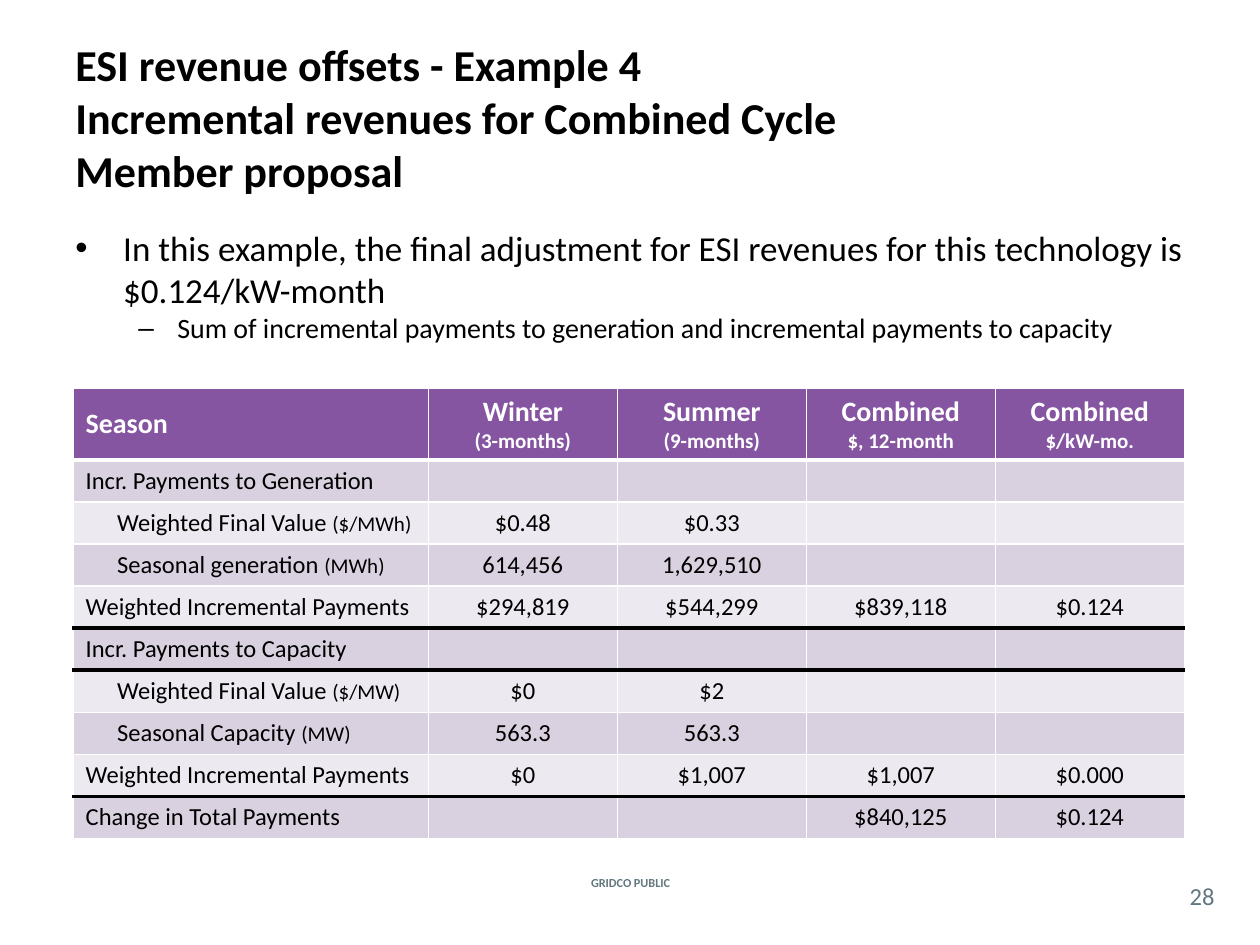
import pptx
import pptx.dml.color
import pptx.enum.text
import pptx.oxml.ns
import pptx.util
from lxml import etree
from pptx.util import Inches

ALIGN = pptx.enum.text.PP_ALIGN
ANCHOR = pptx.enum.text.MSO_ANCHOR
qn = pptx.oxml.ns.qn


def style(font, size, color, bold=False):
    font.name = "Calibri"
    font.size = pptx.util.Pt(size)
    font.bold = bold
    font.color.rgb = pptx.dml.color.RGBColor.from_string(color)


def add_text_frame(left, top, width, height, anchor=ANCHOR.MIDDLE):
    box = slide.shapes.add_textbox(Inches(left), Inches(top), Inches(width), Inches(height))
    frame = box.text_frame
    frame.word_wrap = True
    frame.vertical_anchor = anchor
    return frame


presentation = pptx.Presentation()
presentation.slide_width = Inches(10)
presentation.slide_height = Inches(7.5)
slide = presentation.slides.add_slide(presentation.slide_layouts[6])

# Title
title = add_text_frame(0.5, 0.3, 9, 1.25).paragraphs[0]
title.text = ("ESI revenue offsets - Example 4\v"
              "Incremental revenues for Combined Cycle\v"
              "Member proposal")
style(title.font, 25.2, "000000", True)

# Bulleted body: text, bullet, left margin, hanging indent, size
bullets = [
    ("In this example, the final adjustment for ESI revenues for this technology is "
     "$0.124/kW-month", "•", 0.38, 0.38, 20),
    ("Sum of incremental payments to generation and incremental payments to capacity",
     "–", 0.81, 0.31, 16),
]
body = add_text_frame(0.5, 1.75, 9, 5, ANCHOR.TOP)
for level, (text, bullet, margin, hanging, size) in enumerate(bullets):
    paragraph = body.add_paragraph() if level else body.paragraphs[0]
    paragraph.text = text
    paragraph.level = level
    properties = paragraph._p.get_or_add_pPr()
    properties.set("marL", str(Inches(margin)))
    properties.set("indent", str(-Inches(hanging)))
    etree.SubElement(properties, qn("a:buFont")).set("typeface", "Arial")
    etree.SubElement(properties, qn("a:buChar")).set("char", bullet)
    style(paragraph.font, size, "000000")

# Table contents: label and unit, then winter, summer and the two combined values
headers = [("Season",), ("Winter", "(3-months)"), ("Summer", "(9-months)"),
           ("Combined", "$, 12-month"), ("Combined", "$/kW-mo.")]
rows = [
    (("Incr. Payments to Generation", ""), "", "", "", ""),
    (("Weighted Final Value ", "($/MWh)"), "$0.48", "$0.33", "", ""),
    (("Seasonal generation ", "(MWh)"), "614,456", "1,629,510", "", ""),
    (("Weighted Incremental Payments", ""), "$294,819", "$544,299", "$839,118", "$0.124"),
    (("Incr. Payments to Capacity", ""), "", "", "", ""),
    (("Weighted Final Value ", "($/MW)"), "$0", "$2", "", ""),
    (("Seasonal Capacity ", "(MW)"), "563.3", "563.3", "", ""),
    (("Weighted Incremental Payments", ""), "$0", "$1,007", "$1,007", "$0.000"),
    (("Change in Total Payments", ""), "", "", "$840,125", "$0.124"),
]
table = slide.shapes.add_table(len(rows) + 1, len(headers), Inches(0.58), Inches(3.08),
                               Inches(8.82), Inches(3.54)).table
for index, column in enumerate(table.columns):
    column.width = Inches(1.5 if index else 2.82)
for index, row in enumerate(table.rows):
    row.height = Inches(0.33 if index else 0.57)

# Header text
for column, lines in enumerate(headers):
    cell = table.cell(0, column)
    cell.text = "\n".join(lines)
    cell.vertical_anchor = ANCHOR.BOTTOM if column else ANCHOR.MIDDLE
    for paragraph, size in zip(cell.text_frame.paragraphs, (16, 12)):
        paragraph.alignment = ALIGN.CENTER if column else ALIGN.LEFT
        style(paragraph.font, size, "FFFFFF", True)

# Row labels and values
for row, ((label, unit), *values) in enumerate(rows, start=1):
    paragraph = table.cell(row, 0).text_frame.paragraphs[0]
    paragraph.add_run().text = label
    if unit:
        paragraph._p.get_or_add_pPr().set("marL", str(Inches(0.25)))
        unit_run = paragraph.add_run()
        unit_run.text = unit
        unit_run.font.size = pptx.util.Pt(12)
    style(paragraph.font, 14, "000000")
    for column, value in enumerate(values, start=1):
        cell = table.cell(row, column)
        cell.vertical_anchor = ANCHOR.MIDDLE
        paragraph = cell.text_frame.paragraphs[0]
        paragraph.alignment = ALIGN.CENTER
        style(paragraph.font, 14, "000000")
        if value:
            paragraph.add_run().text = value
        else:
            # Keeps empty cells from stretching the row
            etree.SubElement(paragraph._p, qn("a:endParaRPr")).set("sz", "1400")

# Cell borders and banded fills; rules are keyed by the row they lie below
rules = {0: ("FFFFFF", 3), 4: ("000000", 2.25), 5: ("000000", 2.25), 8: ("000000", 2.25)}
thin = ("FFFFFF", 1)
for row in range(len(rows) + 1):
    fill = "8555A1" if row == 0 else ("D9D1E0" if row % 2 else "EDE9F0")
    edges = {"L": thin, "R": thin, "T": rules.get(row - 1, thin), "B": rules.get(row, thin)}
    for column in range(len(headers)):
        cell = table.cell(row, column)
        properties = cell._tc.get_or_add_tcPr()
        for side, (color, width) in edges.items():
            line = etree.SubElement(properties, qn("a:ln" + side))
            line.set("w", str(pptx.util.Pt(width)))
            line_fill = etree.SubElement(line, qn("a:solidFill"))
            etree.SubElement(line_fill, qn("a:srgbClr")).set("val", color)
        cell.fill.solid()
        cell.fill.fore_color.rgb = pptx.dml.color.RGBColor.from_string(fill)

# Footer label and slide number
footers = [("GRIDCO PUBLIC", 4.27, 6.92, 1.47, 0.17, 7, True),
           ("28", 9.33, 6.96, 0.42, 0.29, 14, False)]
for text, left, top, width, height, size, bold in footers:
    frame = add_text_frame(left, top, width, height)
    frame.margin_left = frame.margin_right = frame.margin_top = frame.margin_bottom = 0
    paragraph = frame.paragraphs[0]
    paragraph.text = text
    paragraph.alignment = ALIGN.CENTER
    style(paragraph.font, size, "62777F", bold)

presentation.save("out.pptx")
